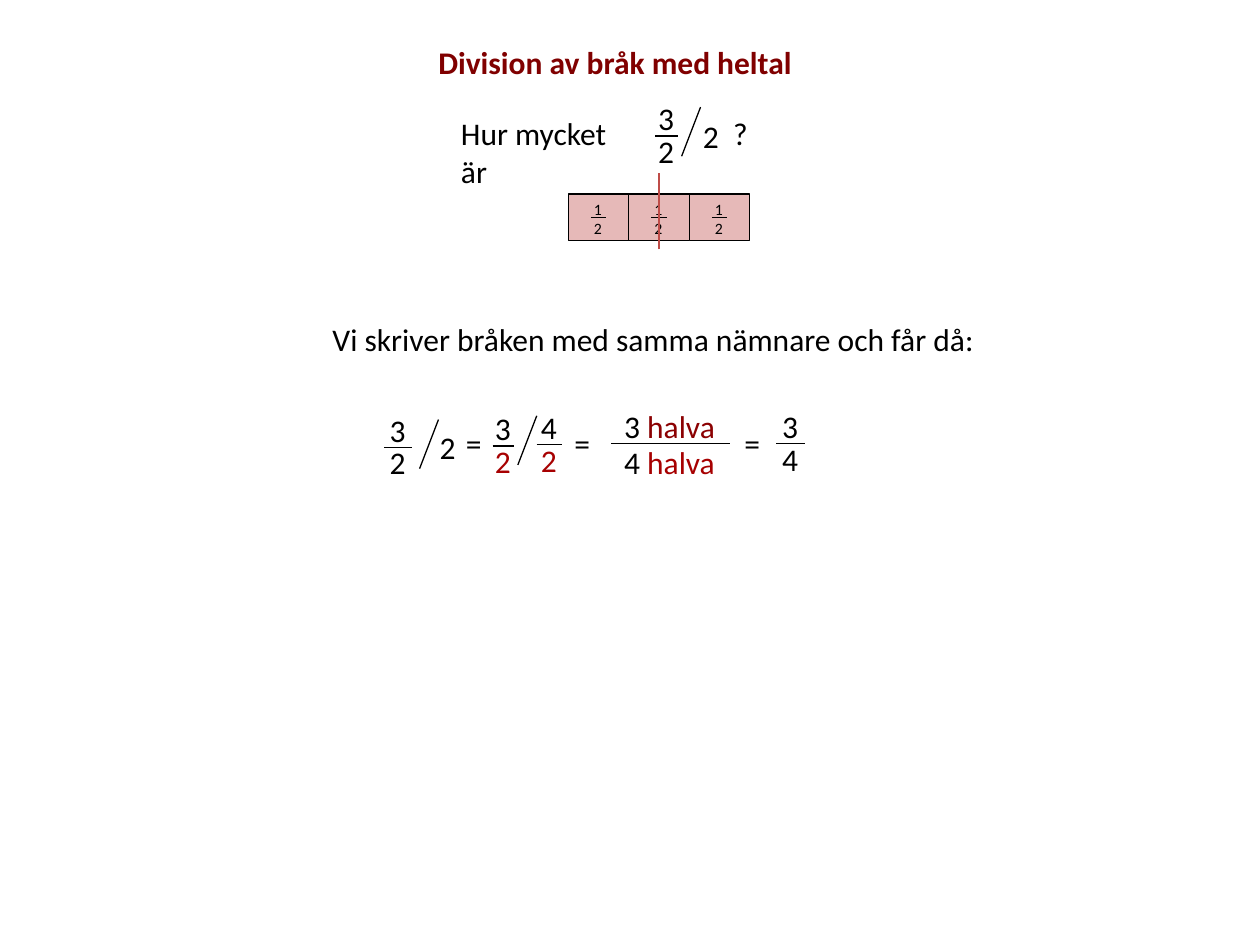
import dataclasses
import typing

import lxml.etree
import pptx
import pptx.dml.color
import pptx.enum.shapes
import pptx.enum.text
import pptx.oxml.ns
import pptx.util


@dataclasses.dataclass(frozen=True)
class Theme:
    """Colours, font and sizes of the slide."""
    font: str = "Calibri"
    ink: str = "000000"
    title: str = "800000"
    red: str = "A70001"
    deep: str = "8B0102"
    pink: str = "E6B9B8"
    cut: str = "BF4C48"
    big: int = 18
    small: int = 9
    thin: float = 0.75
    thick: float = 1.5


THEME = Theme()
COLS, ROWS = 100, 75
WIDE, HIGH = pptx.util.Inches(10), pptx.util.Inches(7.5)
DIGIT = {THEME.big: (3.3, 4), THEME.small: (2.7, 2.5)}


class Box(typing.NamedTuple):
    """A region in columns and rows of the slide grid."""
    x: float
    y: float
    w: float
    h: float

    def inner(self, x, y, w, h):
        """Return a box placed from this box's corner."""
        return Box(self.x + x, self.y + y, w, h)

    def size(self):
        """Return left, top, width and height as slide lengths."""
        col, row = WIDE / COLS, HIGH / ROWS
        return (round(self.x * col), round(self.y * row),
                round(self.w * col), round(self.h * row))


def tint(code):
    """Turn a hex code into a colour."""
    return pptx.dml.color.RGBColor.from_string(code)


def write(shapes, box, runs, size=THEME.big, bold=None):
    """Add a text box from pairs of text and colour."""
    frame = shapes.add_textbox(*box.size()).text_frame
    frame.word_wrap = False
    frame.auto_size = pptx.enum.text.MSO_AUTO_SIZE.SHAPE_TO_FIT_TEXT
    for text, code in runs:
        run = frame.paragraphs[0].add_run()
        run.text = text
        run.font.name = THEME.font
        run.font.size = pptx.util.Pt(size)
        run.font.bold = bold
        run.font.color.rgb = tint(code)


def sign(shapes, box, x, y, text):
    """Add a single black character at a spot in the box."""
    write(shapes, box.inner(x, y, *DIGIT[THEME.big]), [(text, THEME.ink)])


def rule(shapes, box, code=THEME.ink, width=THEME.thin):
    """Draw a line from the box's lower left to its upper right."""
    x, y, w, h = box.size()
    line = shapes.add_connector(
        pptx.enum.shapes.MSO_CONNECTOR.STRAIGHT, x, y + h, x + w, y)
    line.line.color.rgb = tint(code)
    line.line.width = pptx.util.Pt(width)
    lxml.etree.SubElement(line._element.spPr, pptx.oxml.ns.qn("a:effectLst"))


def slash(shapes, box, x, y):
    """Draw a division slash."""
    rule(shapes, box.inner(x, y, 1.5, 3.9))


def ratio(shapes, bar, top, low, size=THEME.big, wide=None, drop=-0.8):
    """Draw a fraction with its terms centred on the bar."""
    w, h = DIGIT[size]
    w = wide or w
    left = (bar.w - w) / 2
    rise = -3.4 if size == THEME.big else -1.9
    write(shapes, bar.inner(left, rise, w, h), top, size)
    write(shapes, bar.inner(left, drop, w, h), low, size)
    rule(shapes, bar)


def ask(slide, box):
    """Pose the question."""
    shapes = slide.shapes.add_group_shape().shapes
    ink = THEME.ink
    write(shapes, box.inner(0, 1.2, 16.1, 4), [("Hur mycket är", ink)])
    ratio(shapes, box.inner(16.4, 3.4, 1.8, 0), [("3", ink)], [("2", ink)])
    slash(shapes, box, 18.5, 1.1)
    sign(shapes, box, 19.2, 1.4, "2")
    sign(shapes, box, 21.6, 1.2, "?")


def halves(slide, box):
    """Draw three halves and the cut through their middle."""
    shapes = slide.shapes.add_group_shape().shapes
    count, bar = 3, 1.2
    wide = box.w / count
    for i in range(count):
        cell = box.inner(i * wide, 0, wide, box.h)
        rect = shapes.add_shape(
            pptx.enum.shapes.MSO_SHAPE.RECTANGLE, *cell.size())
        rect.shadow.inherit = False
        rect.fill.solid()
        rect.fill.fore_color.rgb = tint(THEME.pink)
        rect.line.color.rgb = tint(THEME.ink)
        rect.line.width = pptx.util.Pt(THEME.thin)
        ratio(shapes, cell.inner((wide - bar) / 2, box.h / 2, bar, 0),
              [("1", THEME.ink)], [("2", THEME.ink)], THEME.small, drop=-0.4)
    rule(slide.shapes, box.inner(box.w / 2, -1.7, 0, 6.1),
         THEME.cut, THEME.thick)


def solve(slide, box):
    """Set out the steps of the division."""
    shapes = slide.shapes.add_group_shape().shapes
    ink, red = THEME.ink, THEME.red
    for x, y, w, top, low, code in (
            (0.6, 3.8, 2.2, "3", "2", ink),
            (9.2, 3.7, 1.7, "3", "2", red),
            (12.7, 3.6, 2, "4", "2", red),
            (31.7, 3.5, 2.3, "3", "4", ink)):
        ratio(shapes, box.inner(x, y, w, 0), [(top, ink)], [(low, code)])
    ratio(shapes, box.inner(18.6, 3.5, 9.4, 0),
          [("3 ", ink), ("halva", THEME.deep)],
          [("4", ink), (" halva", red)], wide=9.3, drop=-0.5)
    slash(shapes, box, 3.4, 1.6)
    slash(shapes, box, 11.2, 1.3)
    sign(shapes, box, 4, 1.8, "2")
    for x in (6.1, 14.7, 28.2):
        sign(shapes, box, x, 1.5, "=")


def main():
    """Build and save the slide."""
    deck = pptx.Presentation()
    deck.slide_width, deck.slide_height = WIDE, HIGH
    slide = deck.slides.add_slide(deck.slide_layouts[6])
    write(slide.shapes, Box(33.8, 2.9, 32.5, 4),
          [("Division av bråk med heltal", THEME.title)], bold=True)
    ask(slide, Box(35.6, 7.4, 25, 6.6))
    halves(slide, Box(45.1, 15.4, 14.4, 3.7))
    write(slide.shapes, Box(25.4, 24.9, 53.5, 4),
          [("Vi skriver bråken med samma nämnare och får då:", THEME.ink)])
    solve(slide, Box(29.9, 31.7, 34.4, 7))
    deck.save("out.pptx")


if __name__ == "__main__":
    main()
